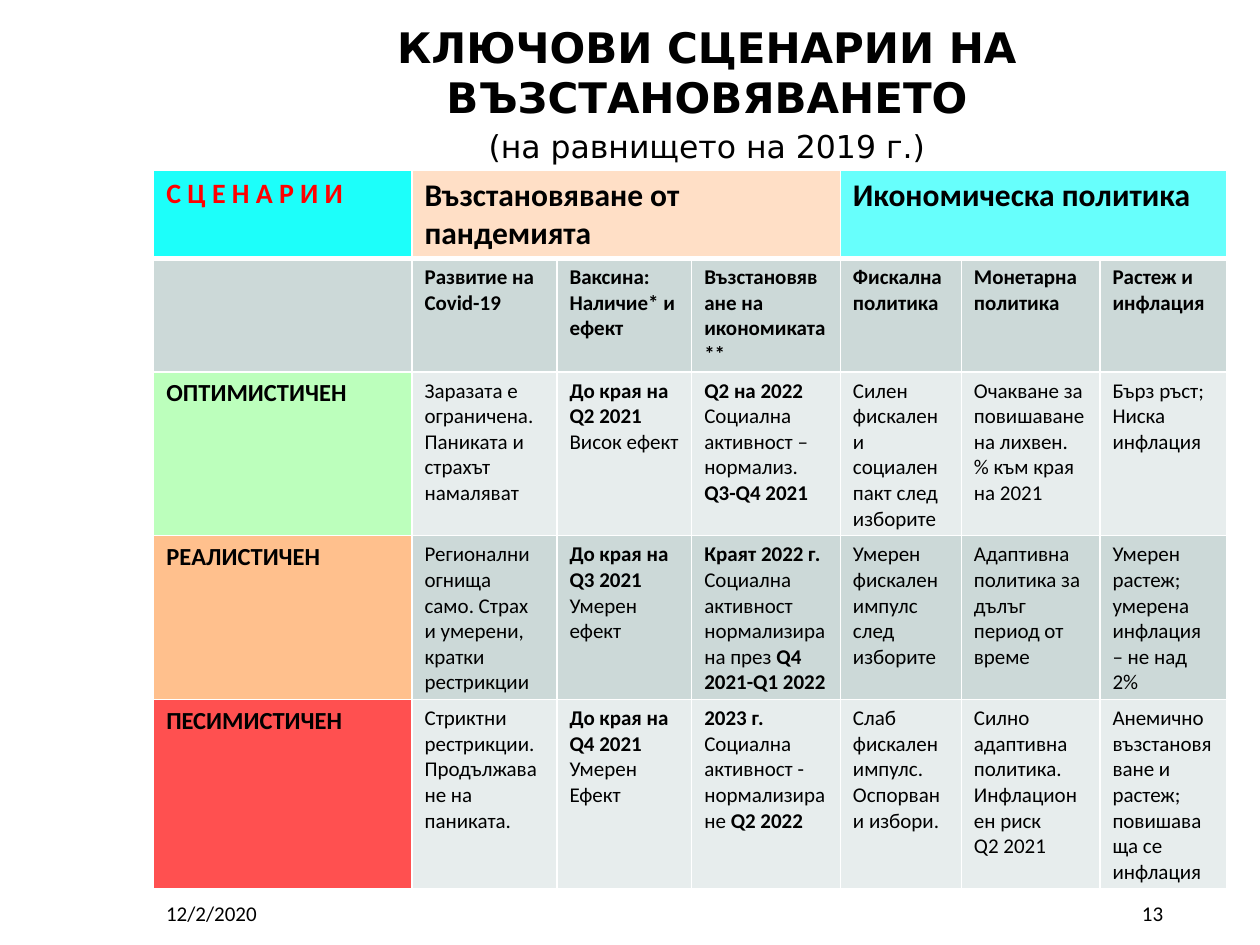
from dataclasses import dataclass

from lxml.etree import SubElement
from pptx import Presentation
from pptx.dml.color import RGBColor
from pptx.enum.text import MSO_ANCHOR, PP_ALIGN
from pptx.oxml.ns import qn
from pptx.util import Inches, Pt


@dataclass(frozen=True)
class Theme:
    """Colours, fonts and type sizes of the slide."""
    black: str = "000000"
    white: str = "FFFFFF"
    red: str = "FF0000"
    cyan: str = "1CFFFA"
    aqua: str = "67FFFC"
    peach: str = "FFDFC6"
    dark: str = "CCD9D8"
    light: str = "E7EDED"
    green: str = "BCFFBC"
    amber: str = "FFC08D"
    coral: str = "FF5050"
    head: str = "DejaVu Sans"
    body: str = "Calibri"
    title: int = 24
    large: int = 18
    label: int = 16
    name: int = 14
    small: int = 12


class Deck:
    """Style and current slide, measured on a grid of 100 columns by 75 rows."""

    def __init__(self, theme):
        self.theme = theme
        self.file = Presentation()
        self.file.slide_width, self.file.slide_height = Inches(10), Inches(7.5)
        self.unit = self.file.slide_width // 100
        self.slide = self.file.slides.add_slide(self.file.slide_layouts[6])

    def span(self, *cells):
        """Turn grid counts into lengths."""
        return [int(n * self.unit) for n in cells]

    def style(self, font, size, bold=False, color=None, face=None):
        """Set the look of a font."""
        font.size, font.bold = Pt(size), bold
        font.name = face or self.theme.body
        font.color.rgb = RGBColor.from_string(color or self.theme.black)

    def text(self, box, lines, align=PP_ALIGN.LEFT):
        """Add a text box of lines given as text, size, bold and face."""
        frame = self.slide.shapes.add_textbox(*self.span(*box)).text_frame
        frame.word_wrap, frame.vertical_anchor = True, MSO_ANCHOR.MIDDLE
        for i, (words, size, bold, face) in enumerate(lines):
            para = frame.add_paragraph() if i else frame.paragraphs[0]
            para.text, para.alignment = words, align
            para.space_before = Pt(3 if i else 0)
            self.style(para.font, size, bold, face=face)

    def edge(self, cell, top, base):
        """Draw white borders around a cell."""
        props = cell._tc.get_or_add_tcPr()
        sides = {"a:lnL": 1, "a:lnR": 1, "a:lnT": top, "a:lnB": base}
        for i, (tag, width) in enumerate(sides.items()):
            line = SubElement(props, qn(tag), w=str(Pt(width)))
            fill = SubElement(line, qn("a:solidFill"))
            SubElement(fill, qn("a:srgbClr"), val=self.theme.white)
            props.insert(i, line)

    def fill(self, cell, words, color, size, bold=False, ink=None):
        """Fill a cell; | splits paragraphs and _ switches bold."""
        cell.fill.solid()
        cell.fill.fore_color.rgb = RGBColor.from_string(color)
        frame = cell.text_frame
        for i, line in enumerate(words.split("|")):
            para = frame.add_paragraph() if i else frame.paragraphs[0]
            parts = [(s, bold ^ (k % 2 == 1)) for k, s in enumerate(line.split("_")) if s]
            same = len({b for _, b in parts}) < 2
            if same:
                self.style(para.font, size, parts[0][1] if parts else bold, ink)
            for part, heavy in parts:
                run = para.add_run()
                run.text = part
                if not same:
                    self.style(run.font, size, heavy, ink)

    def table(self, spot, cols, rows):
        """Add a bordered plain table and return it."""
        size = self.span(*spot, sum(cols), sum(rows))
        grid = self.slide.shapes.add_table(len(rows), len(cols), *size).table
        grid.first_row = grid.horz_banding = False
        for col, width in zip(grid.columns, self.span(*cols)):
            col.width = width
        for r, (row, height) in enumerate(zip(grid.rows, self.span(*rows))):
            row.height = height
            for cell in row.cells:
                self.edge(cell, 3 if r == 1 else 1, 1 if r else 3)
        return grid


HEADS = ["", "Развитие на Covid-19", "Ваксина: Наличие* и ефект",
         "Възстановяване на икономиката**", "Фискална политика",
         "Монетарна политика", "Растеж и инфлация"]
CASES = [
    ["ОПТИМИСТИЧЕН",
     "Заразата е ограничена. Паниката и страхът намаляват",
     "_До края на Q2 2021_|Висок ефект",
     "_Q2 на 2022 _Социална активност – нормализ. _Q3-Q4 2021_",
     "Силен фискален и социален пакт след изборите",
     "Очакване за повишаване на лихвен. % към края на 2021",
     "Бърз ръст;|Ниска инфлация"],
    ["РЕАЛИСТИЧЕН",
     "Регионални огнища само. Страх и умерени, кратки рестрикции",
     "_До края на Q3 2021 _Умерен ефект",
     "_Краят 2022 г._|Социална активност нормализирана през _Q4 2021-Q1 2022_",
     "Умерен фискален импулс след изборите",
     "Адаптивна политика за дълъг период от време",
     "Умерен растеж; умерена инфлация – не над 2%"],
    ["ПЕСИМИСТИЧЕН",
     "Стриктни рестрикции. Продължаване на паниката.",
     "_До края на_|_Q4 2021_|Умерен Ефект",
     "_2023 г._|Социална активност - нормализиранe _Q2 2022_",
     "Слаб фискален импулс.|Оспорвани избори.",
     "Силно адаптивна политика. Инфлационен риск|Q2 2021",
     "Анемично възстановяване и растеж; повишаваща се инфлация"],
]


def main():
    """Build the slide and save it."""
    look = Theme()
    deck = Deck(look)
    deck.text((12.2, 2.1, 87.8, 10.6),
              [("КЛЮЧОВИ СЦЕНАРИИ НА ВЪЗСТАНОВЯВАНЕТО", look.title, True, look.head),
               ("(на равнището на 2019 г.)", look.large, False, look.head)],
              PP_ALIGN.CENTER)
    grid = deck.table((12.2, 13.5), [20.5, 11.5, 10.7, 11.8, 9.6, 11, 10.1],
                      [7, 8.9, 12.9, 12.9, 14.9])
    deck.fill(grid.cell(0, 0), "С Ц Е Н А Р И И", look.cyan, look.label, True, look.red)
    groups = [(1, "Възстановяване от пандемията", look.peach),
              (4, "Икономическа политика", look.aqua)]
    for col, words, color in groups:
        grid.cell(0, col).merge(grid.cell(0, col + 2))
        deck.fill(grid.cell(0, col), words, color, look.large, True)
    for col, words in enumerate(HEADS):
        deck.fill(grid.cell(1, col), words, look.dark, look.small, True)
    tints = [look.green, look.amber, look.coral]
    for row, (case, tint) in enumerate(zip(CASES, tints), 2):
        deck.fill(grid.cell(row, 0), case[0], tint, look.name, True)
        band = look.dark if row % 2 else look.light
        for col, words in enumerate(case[1:], 1):
            deck.fill(grid.cell(row, col), words, band, look.small)
    deck.text((12.2, 70.5, 20.1, 4), [("12/2/2020", look.small, False, look.body)])
    deck.text((72.8, 70.5, 20.5, 4), [("13", look.small, False, look.body)],
              PP_ALIGN.RIGHT)
    deck.file.save("out.pptx")


if __name__ == "__main__":
    main()
